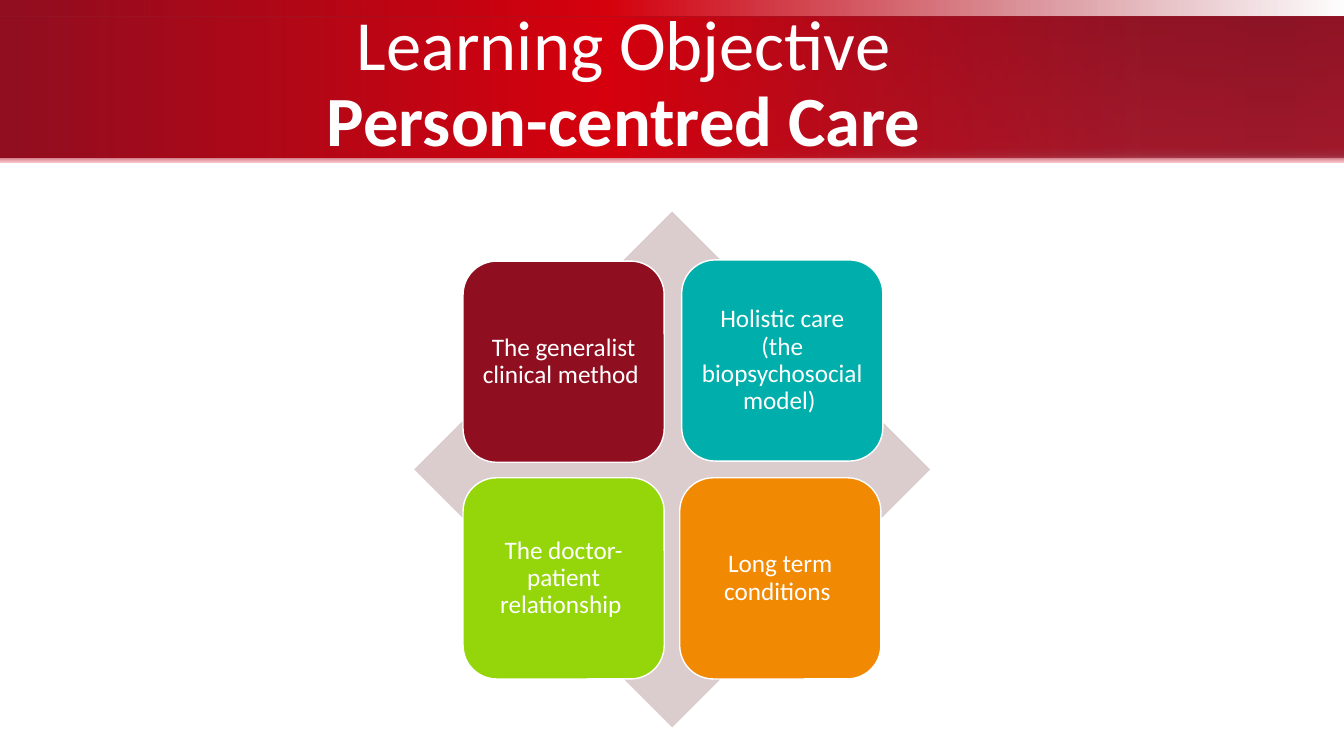
"""Build the person-centred care slide: a red banner above four tiles on a diamond."""
from lxml.etree import SubElement
from pptx import Presentation
from pptx.dml.color import RGBColor
from pptx.enum.shapes import MSO_SHAPE
from pptx.enum.text import MSO_ANCHOR, PP_ALIGN
from pptx.oxml.ns import qn
from pptx.util import Cm, Pt

SLIDE_WIDTH, SLIDE_HEIGHT = 33.87, 19.05
WHITE = "FFFFFF"

TITLE = [("Learning Objective", False), ("Person-centred Care", True)]
TITLE_PLACE = (1.7, 0.41, 28.04, 3.48)

BANDS = [
    {"top": 0, "height": 0.43, "angle": 0,
     "stops": [(0, "8F0E20", 100), (45, "D6000D", 100), (100, "8F0E20", 0)]},
    {"top": 0.41, "height": 3.68, "angle": 90,
     "stops": [(0, "931E2F", 100), (90, "BA2A3C", 100),
               (95, "B54E5C", 100), (100, "F9BFC7", 100)]},
    {"top": 0.41, "height": 3.56, "angle": 0,
     "stops": [(0, "8F0E20", 100), (45, "D6000D", 100), (85, "8F0E20", 60),
               (95, "890D1F", 60), (100, "8F0E20", 60)]},
]

DIAMOND_PLACE = (10.44, 5.33, 13, 13)
DIAMOND_COLOUR = "DBCCCD"
TILE_SIZE = 5.07
TILES = [
    ("The generalist clinical method ", "8F0E20", 11.67, 6.58),
    ("Holistic care (the biopsychosocial model) ", "00AFAB", 17.18, 6.55),
    ("The doctor-patient relationship ", "94D60A", 11.67, 12.04),
    ("Long term conditions ", "F18903", 17.13, 12.04),
]

TILE_FRAME = {"word_wrap": True, "vertical_anchor": MSO_ANCHOR.MIDDLE,
              "margin_left": Cm(0.18), "margin_right": Cm(0.18),
              "margin_top": Cm(0.18), "margin_bottom": Cm(0.18)}
TITLE_FRAME = {"word_wrap": True, "vertical_anchor": MSO_ANCHOR.MIDDLE}
CENTRED = {"alignment": PP_ALIGN.CENTER, "line_spacing": 0.9}


def apply(target, values):
    for attribute, value in values.items():
        setattr(target, attribute, value)


def paint(colour_format, colour):
    colour_format.rgb = RGBColor.from_string(colour)


def add_figure(slide, preset, place):
    figure = slide.shapes.add_shape(preset, *map(Cm, place))
    figure.shadow.inherit = False
    figure.line.fill.background()
    return figure


def fill_solid(figure, colour):
    figure.fill.solid()
    paint(figure.fill.fore_color, colour)


def fill_gradient(figure, stops, angle):
    figure.fill.gradient()
    figure.fill.gradient_angle = -angle % 360
    stop_list = figure.fill._fill._gradFill.find(qn("a:gsLst"))
    for old_stop in list(stop_list):
        stop_list.remove(old_stop)
    for position, colour, opacity in stops:
        stop = SubElement(stop_list, qn("a:gs"), pos=str(position * 1000))
        shade = SubElement(stop, qn("a:srgbClr"), val=colour)
        if opacity < 100:
            SubElement(shade, qn("a:alpha"), val=str(opacity * 1000))


def write(frame, lines, size, frame_format):
    apply(frame, frame_format)
    paragraph = frame.paragraphs[0]
    apply(paragraph, CENTRED)
    for number, (words, bold) in enumerate(lines):
        if number:
            paragraph.add_line_break()
        run = paragraph.add_run()
        run.text = words
        apply(run.font, {"name": "Calibri", "size": Pt(size), "bold": bold})
        paint(run.font.color, WHITE)


def main():
    deck = Presentation()
    apply(deck, {"slide_width": Cm(SLIDE_WIDTH), "slide_height": Cm(SLIDE_HEIGHT)})
    slide = deck.slides.add_slide(deck.slide_layouts[6])

    for band in BANDS:
        place = (0, band["top"], SLIDE_WIDTH, band["height"])
        strip = add_figure(slide, MSO_SHAPE.RECTANGLE, place)
        fill_gradient(strip, band["stops"], band["angle"])

    title = slide.shapes.add_textbox(*map(Cm, TITLE_PLACE))
    write(title.text_frame, TITLE, 50.4, TITLE_FRAME)

    diamond = add_figure(slide, MSO_SHAPE.DIAMOND, DIAMOND_PLACE)
    fill_solid(diamond, DIAMOND_COLOUR)

    for topic, colour, left, top in TILES:
        tile = add_figure(slide, MSO_SHAPE.ROUNDED_RECTANGLE,
                          (left, top, TILE_SIZE, TILE_SIZE))
        fill_solid(tile, colour)
        tile.line.width = Pt(1)
        tile.line.fill.solid()
        paint(tile.line.color, WHITE)
        write(tile.text_frame, [(topic, False)], 18, TILE_FRAME)

    deck.save("out.pptx")


if __name__ == "__main__":
    main()
